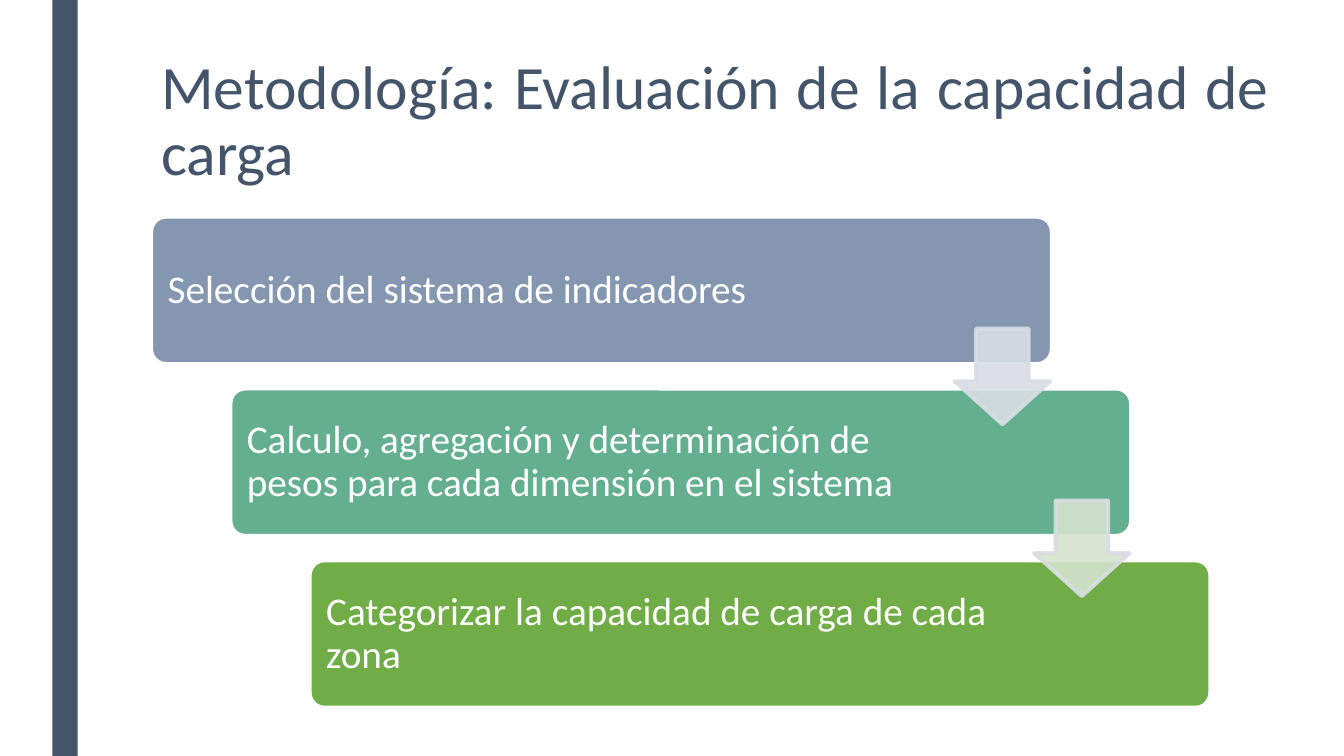
"""Build a slide with three staggered methodology steps joined by arrows."""
from dataclasses import dataclass

from lxml.etree import SubElement
from pptx import Presentation
from pptx.dml.color import RGBColor
from pptx.enum.shapes import MSO_SHAPE as Preset
from pptx.enum.text import MSO_ANCHOR as Anchor, PP_ALIGN as Align
from pptx.oxml.ns import qn
from pptx.util import Emu, Inches, Pt

SLIDE_WIDTH, SLIDE_HEIGHT = Inches(13.33), Inches(7.5)
FONT_NAME = "Calibri"
OUTLINE_WIDTH = Pt(2.75)
ARROW_OPACITY = 90

NAVY = RGBColor(0x44, 0x54, 0x6A)
WHITE = RGBColor(0xFF, 0xFF, 0xFF)
SLATE = RGBColor(0x84, 0x96, 0xB0)
TEAL = RGBColor(0x65, 0xAF, 0x91)
GREEN = RGBColor(0x70, 0xAD, 0x47)
PALE_GREY = RGBColor(0xD9, 0xDD, 0xE4)
PALE_GREEN = RGBColor(0xD5, 0xE3, 0xCF)


@dataclass(frozen=True)
class Area:
    left: float
    top: float
    width: float
    height: float

    def shifted(self, index: int) -> "Area":
        return Area(self.left + index * STEP_RIGHT, self.top + index * STEP_DOWN,
                    self.width, self.height)

    def lengths(self) -> tuple[Emu, Emu, Emu, Emu]:
        return (Emu(round(SLIDE_WIDTH * self.left / 100)),
                Emu(round(SLIDE_HEIGHT * self.top / 100)),
                Emu(round(SLIDE_WIDTH * self.width / 100)),
                Emu(round(SLIDE_HEIGHT * self.height / 100)))


@dataclass(frozen=True)
class Step:
    text: str
    fill: RGBColor
    text_width: float


STEP_RIGHT, STEP_DOWN = 5.9, 22.73
BAR_AREA = Area(3.9, 0, 1.88, 100)
TITLE_AREA = Area(11.25, 6.93, 84, 21.6)
BOX_AREA = Area(11.25, 28.67, 67, 19.47)
ARROW_AREA = Area(71.03, 43.47, 7.13, 12.67)
TEXT_LEFT, TEXT_TOP, TEXT_HEIGHT = 11.57, 29.24, 18.4

TITLE = "Metodología: Evaluación de la capacidad de carga"
STEPS = (
    Step("Selección del sistema de indicadores", SLATE, 55.13),
    Step("Calculo, agregación y determinación de pesos para cada dimensión en el sistema",
         TEAL, 53.25),
    Step("Categorizar la capacidad de carga de cada zona", GREEN, 53.25),
)
ARROW_FILLS = (PALE_GREY, PALE_GREEN)


def add_preset(slide, preset: Preset, area: Area, fill: RGBColor,
               outline: RGBColor | None = None, adjustments: tuple[float, ...] = ()):
    shape = slide.shapes.add_shape(preset, *area.lengths())
    shape.shadow.inherit = False
    shape.fill.solid()
    shape.fill.fore_color.rgb = fill
    if outline is None:
        shape.line.fill.background()
    else:
        shape.line.color.rgb = outline
        shape.line.width = OUTLINE_WIDTH
    for index, value in enumerate(adjustments):
        shape.adjustments[index] = value
    return shape


def set_opacity(shape, percent: int) -> None:
    for color in shape.element.spPr.iter(qn("a:srgbClr")):
        SubElement(color, qn("a:alpha"), val=str(percent * 1000))


def add_text(slide, area: Area, text: str, size: int, color: RGBColor, anchor: Anchor,
             align: Align, spacing: float, inset: tuple[float, float]) -> None:
    frame = slide.shapes.add_textbox(*area.lengths()).text_frame
    frame.word_wrap = True
    frame.vertical_anchor = anchor
    frame.margin_left = frame.margin_right = Inches(inset[0])
    frame.margin_top = frame.margin_bottom = Inches(inset[1])
    paragraph = frame.paragraphs[0]
    paragraph.alignment = align
    paragraph.line_spacing = spacing
    run = paragraph.add_run()
    run.text = text
    run.font.name = FONT_NAME
    run.font.size = Pt(size)
    run.font.color.rgb = color


def add_step(slide, index: int, step: Step) -> None:
    add_preset(slide, Preset.ROUNDED_RECTANGLE, BOX_AREA.shifted(index), step.fill, WHITE, (0.1,))
    text_area = Area(TEXT_LEFT, TEXT_TOP, step.text_width, TEXT_HEIGHT).shifted(index)
    add_text(slide, text_area, step.text, 28, WHITE, Anchor.MIDDLE, Align.LEFT, 0.9, (0.12, 0.12))


def add_arrow(slide, index: int, fill: RGBColor) -> None:
    arrow = add_preset(slide, Preset.DOWN_ARROW, ARROW_AREA.shifted(index), fill,
                       PALE_GREY, (0.55, 0.45))
    set_opacity(arrow, ARROW_OPACITY)


def main() -> None:
    presentation = Presentation()
    presentation.slide_width, presentation.slide_height = SLIDE_WIDTH, SLIDE_HEIGHT
    slide = presentation.slides.add_slide(presentation.slide_layouts[6])
    add_preset(slide, Preset.RECTANGLE, BAR_AREA, NAVY)
    add_text(slide, TITLE_AREA, TITLE, 44, NAVY, Anchor.TOP, Align.JUSTIFY, 0.89, (0.1, 0.05))
    for index, step in enumerate(STEPS):
        add_step(slide, index, step)
    for index, fill in enumerate(ARROW_FILLS):
        add_arrow(slide, index, fill)
    presentation.save("out.pptx")


if __name__ == "__main__":
    main()
